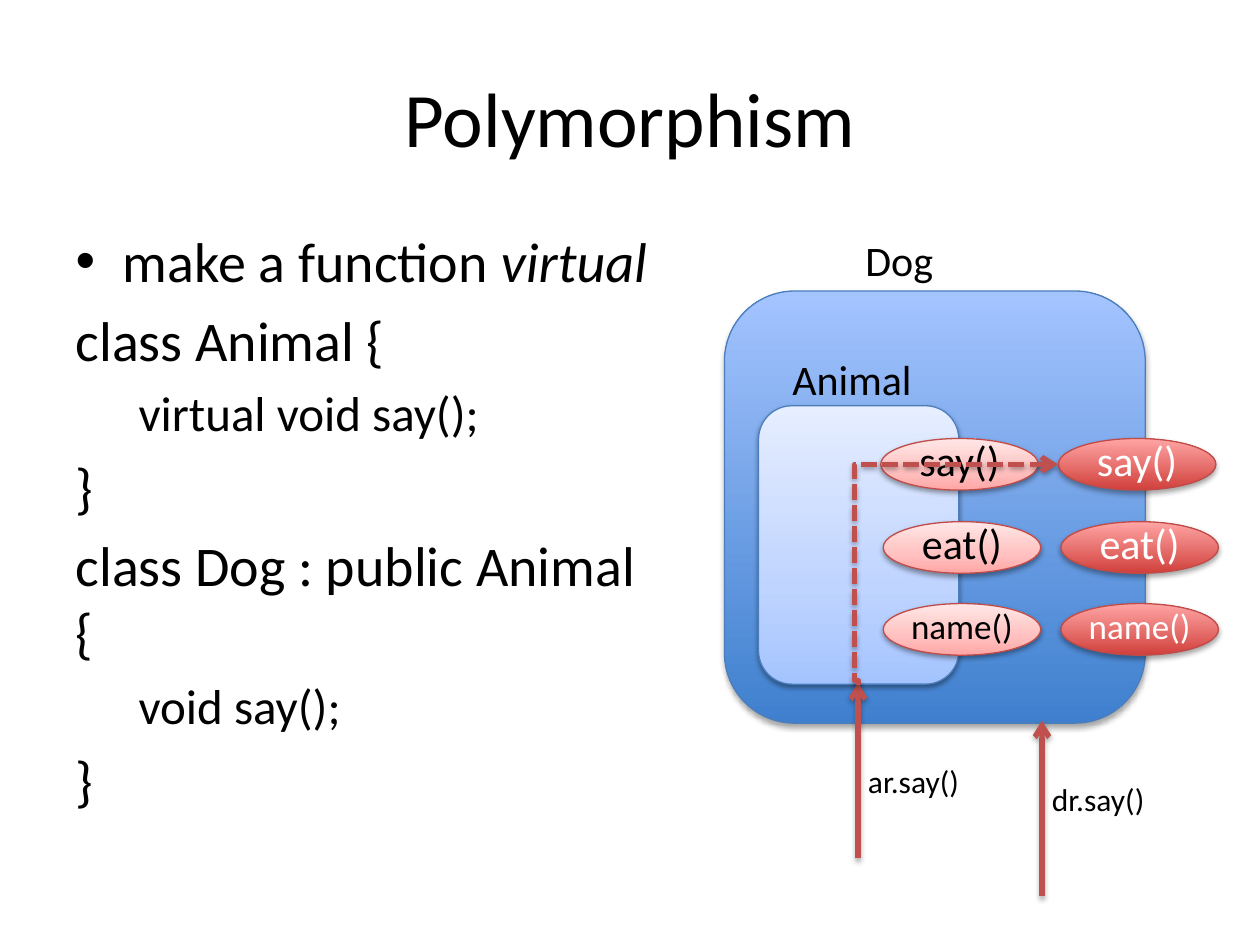
from lxml.etree import SubElement
from pptx import Presentation
from pptx.dml.color import RGBColor
from pptx.enum.dml import MSO_LINE_DASH_STYLE as DASH
from pptx.enum.shapes import MSO_CONNECTOR as CONN, MSO_SHAPE as SHAPE
from pptx.enum.text import MSO_ANCHOR as ANCHOR, MSO_AUTO_SIZE as AUTO, PP_ALIGN as ALIGN
from pptx.oxml.ns import qn
from pptx.util import Inches, Pt

BLACK, WHITE, RED = "000000", "FFFFFF", "C0504D"
# Gradient stops, shadow opacity (%) and shadow distance (pt)
DARK_SHADOW, SOFT_SHADOW = (35, 1.8), (38, 1.6)
DARK_BLUE = dict(stops={0: "3F80CE", 100: "A4C4FF"}, line="4B7EBC", shadow=DARK_SHADOW)
LIGHT_BLUE = dict(stops={0: "A4C4FF", 35: "BFD4FF", 100: "E6EEFF"}, line="4B7EBC", shadow=SOFT_SHADOW)
DARK_RED = dict(stops={0: "D1403C", 100: "FFA6A5"}, line="BF4C48", shadow=DARK_SHADOW)
LIGHT_RED = dict(stops={0: "FFA6A5", 35: "FFC0BF", 100: "FFE7E7"}, line="BF4C48", shadow=SOFT_SHADOW)


def rgb(color):
    return RGBColor.from_string(color)


def sub(parent, tag, **attrs):
    return SubElement(parent, qn(tag), {k: str(v) for k, v in attrs.items()})


def set_all(obj, values):
    for name, value in values.items():
        setattr(obj, name, value)


def place(sp, *box):
    set_all(sp, dict(zip(("left", "top", "width", "height"), map(Inches, box))))


def add_run(p, text, size, color=BLACK, **fmt):
    r = p.add_run()
    r.text = text
    set_all(r.font, dict(name="Calibri", size=Pt(size), **fmt))
    r.font.color.rgb = rgb(color)


def add_shadow(sp, opacity, dist):
    effects = sub(sp._element.spPr, "a:effectLst")
    outer = sub(effects, "a:outerShdw", blurRad=Pt(3.1), dist=Pt(dist), dir=5400000, rotWithShape=0)
    sub(sub(outer, "a:srgbClr", val=BLACK), "a:alpha", val=opacity * 1000)


def add_box(slide, kind, box, style):
    """Shape with an upward gradient, a thin outline and a soft shadow."""
    sp = slide.shapes.add_shape(kind, *map(Inches, box))
    grad = sub(sp._element.spPr, "a:gradFill", rotWithShape=1)
    stops = sub(grad, "a:gsLst")
    for pos, color in style["stops"].items():
        sub(sub(stops, "a:gs", pos=pos * 1000), "a:srgbClr", val=color)
    sub(grad, "a:lin", ang=16200000, scaled=0)
    sp.line.color.rgb = rgb(style["line"])
    sp.line.width = Pt(0.75)
    add_shadow(sp, *style["shadow"])
    return sp


def add_method(slide, left, top, text, size, style, color):
    sp = add_box(slide, SHAPE.OVAL, (left, top, 1.25, 0.41), style)
    tf = sp.text_frame
    tf.vertical_anchor = ANCHOR.MIDDLE
    if size < 24:
        tf.margin_left = tf.margin_right = 0
    p = tf.paragraphs[0]
    set_all(p, dict(alignment=ALIGN.CENTER, line_spacing=0.8))
    add_run(p, text, size, color)


def add_label(slide, box, text, size):
    tf = slide.shapes.add_textbox(*map(Inches, box)).text_frame
    set_all(tf, dict(word_wrap=False, auto_size=AUTO.SHAPE_TO_FIT_TEXT))
    add_run(tf.paragraphs[0], text, size)


def add_arrow(slide, kind, start, end, dash=None):
    cx = slide.shapes.add_connector(kind, *map(Inches, start + end))
    cx.line.color.rgb = rgb(RED)
    set_all(cx.line, dict(width=Pt(3), dash_style=dash))
    sub(cx.line._get_or_add_ln(), "a:tailEnd", type="arrow")
    add_shadow(cx, *DARK_SHADOW)
    return cx


def add_dispatch(slide):
    """Dashed elbow from the Animal call to Dog's say()."""
    cx = add_arrow(slide, CONN.ELBOW, (8.48, 5.35), (6.73, 3.77), DASH.SQUARE_DOT)
    spPr = cx._element.spPr
    spPr.find(qn("a:xfrm")).set("rot", "5400000")
    geom = spPr.find(qn("a:prstGeom"))
    geom.set("prst", "bentConnector4")
    adjusts = geom.find(qn("a:avLst"))
    for name, value in (("adj1", 1800), ("adj2", -2100)):
        sub(adjusts, "a:gd", name=name, fmla=f"val {value}")


def fill_title(sp):
    place(sp, 0.5, 0.3, 9, 1.25)
    tf = sp.text_frame
    tf.vertical_anchor = ANCHOR.MIDDLE
    p = tf.paragraphs[0]
    p.alignment = ALIGN.CENTER
    add_run(p, "Polymorphism", 44)


def fill_body(sp):
    place(sp, 0.5, 1.75, 4.83, 4.95)
    tf = sp.text_frame
    p = tf.paragraphs[0]
    add_run(p, "make a function ", 32)
    add_run(p, "virtual", 32, italic=True)
    code = [(0, "class Animal {"), (1, "virtual void say();"), (0, "}"),
            (0, "class Dog : public Animal {"), (1, "void say();"), (0, "}")]
    for level, text in code:
        p = tf.add_paragraph()
        p.level = level
        pPr = p._p.get_or_add_pPr()
        pPr.set("marL", str(Inches(0.5 * level)))
        pPr.set("indent", "0")
        sub(pPr, "a:buNone")
        add_run(p, text, 28 if level else 32)


def main():
    prs = Presentation()
    set_all(prs, dict(slide_width=Inches(10), slide_height=Inches(7.5)))
    slide = prs.slides.add_slide(prs.slide_layouts[1])
    fill_title(slide.shapes.title)
    fill_body(slide.placeholders[1])

    # Class boxes
    add_box(slide, SHAPE.ROUNDED_RECTANGLE, (5.75, 2.31, 3.34, 3.43), DARK_BLUE)
    add_box(slide, SHAPE.ROUNDED_RECTANGLE, (6.02, 3.22, 1.59, 2.21), LIGHT_BLUE)
    add_label(slide, (6.19, 2.76, 1.16, 0.5), "Animal", 24)
    add_label(slide, (6.77, 1.81, 0.74, 0.5), "Dog", 24)

    # Methods of Animal, then of Dog
    methods = [("say()", 24, 0, 3.48), ("eat()", 24, 0.02, 4.14), ("name()", 20, 0.02, 4.79)]
    for left, style, color in ((6.99, LIGHT_RED, BLACK), (8.4, DARK_RED, WHITE)):
        for text, size, shift, top in methods:
            add_method(slide, left + shift, top, text, size, style, color)

    # Calls through references
    for x, y, text, box in ((6.81, 5.42, "ar.say()", (6.79, 6, 0.96, 0.4)),
                            (8.27, 5.72, "dr.say()", (8.25, 6.14, 0.97, 0.4))):
        add_arrow(slide, CONN.STRAIGHT, (x, y + 1.39), (x, y))
        add_label(slide, box, text, 18)
    add_dispatch(slide)

    prs.save("out.pptx")


if __name__ == "__main__":
    main()
